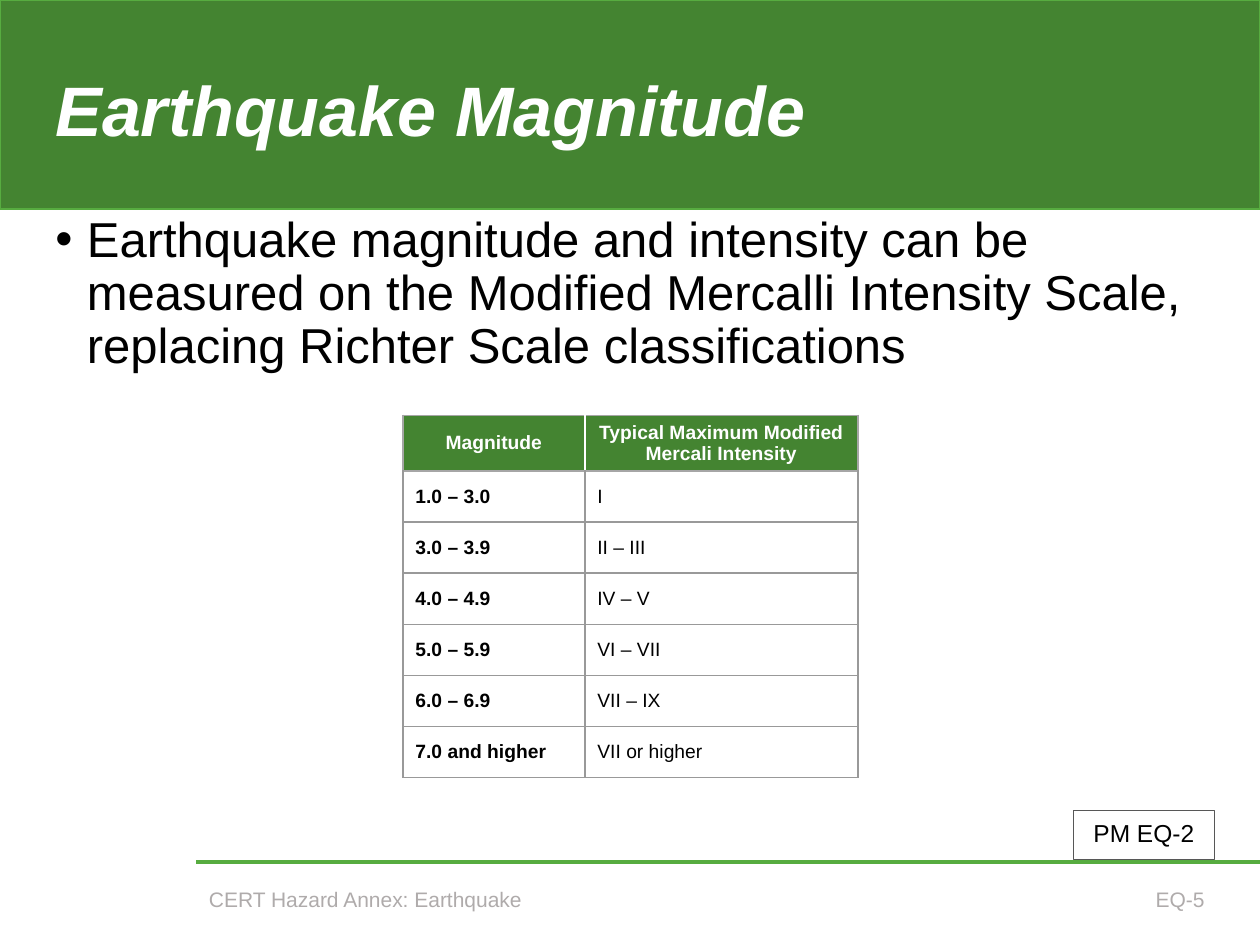
from typing import NamedTuple

from lxml.etree import SubElement
from pptx import Presentation
from pptx.dml.color import RGBColor
from pptx.enum.shapes import MSO_CONNECTOR, MSO_SHAPE
from pptx.enum.text import MSO_ANCHOR as ANCHOR, MSO_AUTO_SIZE, PP_ALIGN as ALIGN
from pptx.oxml.ns import qn
from pptx.util import Pt

COLORS = {
    "band": "448431",
    "accent": "57AC40",
    "white": "FFFFFF",
    "black": "000000",
    "footer": "AFABAB",
    "grid": "999999",
    "header_grid": "A6A6A6",
    "box_line": "575757",
}
FONT = "Arial"
HEADER = ("Magnitude", "Typical Maximum Modified Mercali Intensity")
SCALE = [
    ("1.0 – 3.0", "I"),
    ("3.0 – 3.9", "II – III"),
    ("4.0 – 4.9", "IV – V"),
    ("5.0 – 5.9", "VI – VII"),
    ("6.0 – 6.9", "VII – IX"),
    ("7.0 and higher", "VII or higher"),
]
COLUMN_WIDTHS = (104, 156)
ROW_HEIGHT = 29.2


class Box(NamedTuple):
    left: float
    top: float
    width: float
    height: float


class Label(NamedTuple):
    text: str
    box: Box
    size: float
    color: str
    align: ALIGN
    outlined: bool = False


LABELS = [
    Label("PM EQ-2", Box(613.4, 463, 80.6, 28), 14, "black", ALIGN.CENTER, True),
    Label("EQ-5", Box(553.7, 502.6, 141.8, 23.8), 12, "footer", ALIGN.RIGHT),
    Label("CERT Hazard Annex: Earthquake", Box(112.3, 502.6, 349.2, 23.8), 12,
          "footer", ALIGN.LEFT),
]


def rgb(name: str) -> RGBColor:
    return RGBColor.from_string(COLORS[name])


def points(box: Box) -> list:
    return [Pt(v) for v in box]


def place(s, box: Box) -> None:
    s.left, s.top, s.width, s.height = points(box)


def write(tf, text: str, size: float, color: str, align=ALIGN.LEFT,
          bold=False, italic=False, spacing=0.9) -> None:
    tf.text = text
    p = tf.paragraphs[0]
    p.alignment, p.line_spacing, p.space_before = align, spacing, Pt(0)
    font = p.runs[0].font
    font.name, font.size, font.bold, font.italic = FONT, Pt(size), bold, italic
    font.color.rgb = rgb(color)


def add_band(slide) -> None:
    """Draw the green title band behind the placeholders."""
    s = slide.shapes.add_shape(MSO_SHAPE.RECTANGLE, *points(Box(0, 0, 720, 119.5)))
    s.shadow.inherit = False
    s.fill.solid()
    s.fill.fore_color.rgb = rgb("band")
    s.line.color.rgb = rgb("accent")
    s.line.width = Pt(1)
    slide.shapes.element.insert(2, s.element)


def add_footer_rule(slide) -> None:
    line = slide.shapes.add_connector(
        MSO_CONNECTOR.STRAIGHT, Pt(112.3), Pt(492.5), Pt(720), Pt(492.5))
    line.line.color.rgb = rgb("accent")
    line.line.width = Pt(2)
    SubElement(line.element.spPr, qn("a:effectLst"))


def fill_placeholders(slide) -> None:
    title, body = slide.shapes.title, slide.placeholders[1]
    place(title, Box(24.5, 25.2, 457.2, 79.9))
    place(body, Box(24.5, 119.5, 670.3, 376.6))
    for s, anchor in ((title, ANCHOR.MIDDLE), (body, ANCHOR.TOP)):
        tf = s.text_frame
        tf.word_wrap, tf.auto_size, tf.vertical_anchor = True, MSO_AUTO_SIZE.NONE, anchor
    write(title.text_frame, "Earthquake Magnitude", 40, "white", bold=True, italic=True)

    tf = body.text_frame
    write(tf, "Earthquake magnitude and intensity can be measured on the Modified "
          "Mercalli Intensity Scale, replacing Richter Scale classifications", 28, "black")
    pPr = tf.paragraphs[0]._p.get_or_add_pPr()
    pPr.set("marL", str(Pt(18)))
    pPr.set("indent", str(-Pt(18)))
    SubElement(pPr, qn("a:buFont"), typeface=FONT)
    SubElement(pPr, qn("a:buChar"), char="•")


def set_borders(cell, left: str, right: str, top: str, bottom: str) -> None:
    tcPr = cell._tc.get_or_add_tcPr()
    for side, color in zip("LRTB", (left, right, top, bottom)):
        ln = SubElement(tcPr, qn(f"a:ln{side}"), w=str(Pt(1)))
        fill = SubElement(ln, qn("a:solidFill"))
        SubElement(fill, qn("a:srgbClr"), val=COLORS[color])


def add_scale_table(slide) -> None:
    rows = [HEADER, *SCALE]
    box = Box(230.2, 237.4, sum(COLUMN_WIDTHS), ROW_HEIGHT * len(rows))
    table = slide.shapes.add_table(len(rows), len(HEADER), *points(box)).table
    for column, width in zip(table.columns, COLUMN_WIDTHS):
        column.width = Pt(width)
    for r, row in enumerate(rows):
        table.rows[r].height = Pt(ROW_HEIGHT)
        is_header = r == 0
        for c, text in enumerate(row):
            cell = table.cell(r, c)
            if is_header:
                sides = ("header_grid", "white") if c == 0 else ("white", "header_grid")
                set_borders(cell, *sides, "header_grid", "header_grid")
            else:
                top = "header_grid" if r == 1 else "grid"
                set_borders(cell, "grid", "grid", top, "grid")
            cell.fill.solid()
            cell.fill.fore_color.rgb = rgb("band" if is_header else "white")
            cell.vertical_anchor = ANCHOR.MIDDLE
            write(cell.text_frame, text, 11, "white" if is_header else "black",
                  ALIGN.CENTER if is_header else ALIGN.LEFT,
                  bold=is_header or c == 0, spacing=1.0)


def add_label(slide, label: Label) -> None:
    s = slide.shapes.add_textbox(*points(label.box))
    if label.outlined:
        s.line.color.rgb = rgb("box_line")
        s.line.width = Pt(0.75)
    tf = s.text_frame
    tf.word_wrap, tf.vertical_anchor = True, ANCHOR.MIDDLE
    write(tf, label.text, label.size, label.color, label.align)


def main() -> None:
    prs = Presentation()
    prs.slide_width, prs.slide_height = Pt(720), Pt(540)
    slide = prs.slides.add_slide(prs.slide_layouts[1])
    add_band(slide)
    add_footer_rule(slide)
    fill_placeholders(slide)
    add_scale_table(slide)
    for label in LABELS:
        add_label(slide, label)
    prs.save("out.pptx")


if __name__ == "__main__":
    main()
